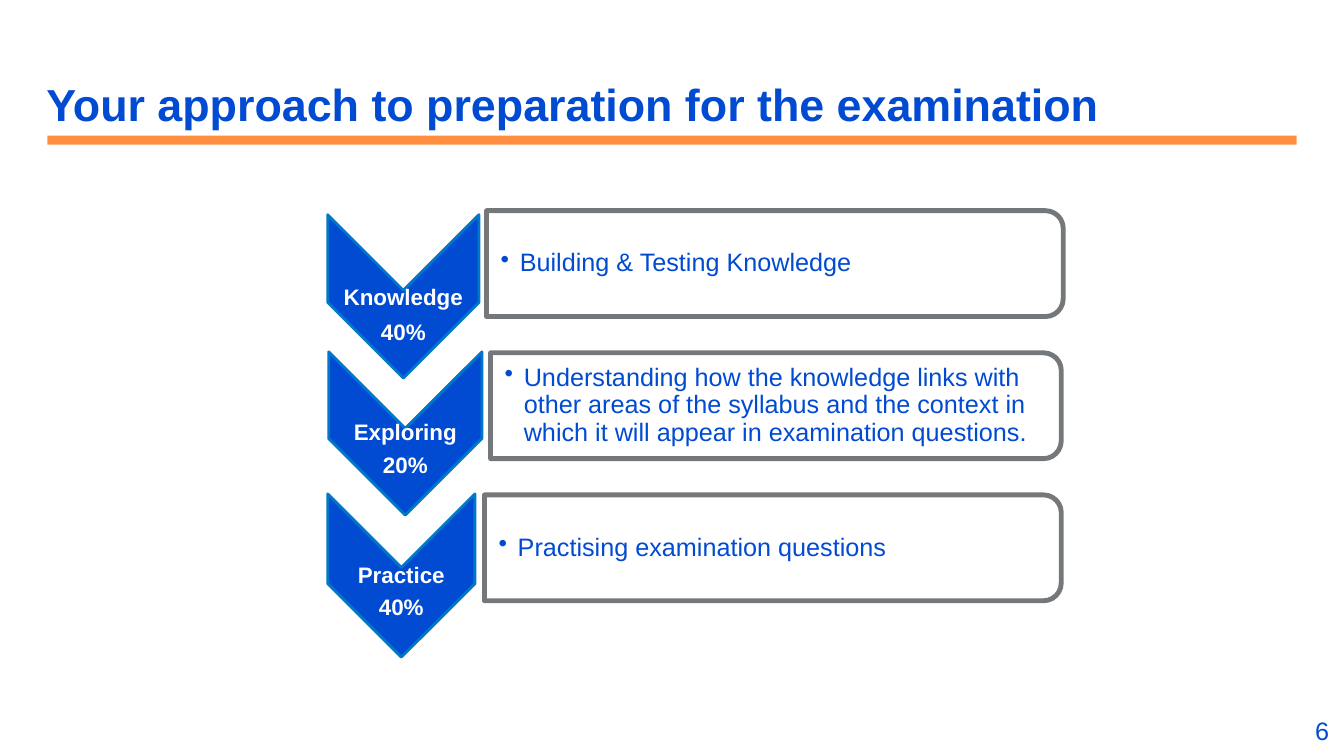
from dataclasses import dataclass

from lxml import etree
from pptx import Presentation
from pptx.dml.color import RGBColor
from pptx.enum.shapes import MSO_CONNECTOR as CONN
from pptx.enum.shapes import MSO_SHAPE as SHAPE
from pptx.enum.text import MSO_ANCHOR as ANCHOR
from pptx.enum.text import PP_ALIGN as ALIGN
from pptx.oxml.ns import qn
from pptx.util import Emu, Inches, Pt

CELL = Inches(0.1)
BLUE, EDGE, ORANGE, GREY, WHITE = "004BD2", "0077C8", "FF6900", "75787B", "FFFFFF"
PITCH = 14.1
FIRST_BOX_ROW = 26.15
CHEVRON_LENGTH, BOX_HEIGHT = 16.2, 10.5


@dataclass
class Step:
    name: str
    share: str
    detail: str
    chevron_col: float
    chevron_row: float
    chevron_width: float
    label_row: float
    box_col: float
    box_width: float
    label_spacing: float = 0.9


STEPS = [
    Step("Knowledge", "40%", "Building & Testing Knowledge",
         40, 29.4, 15, 31.15, 76.85, 57.2, 1.0),
    Step("Exploring", "20%",
         "Understanding how the knowledge links with other areas of the syllabus "
         "and the context in which it will appear in examination questions.",
         40.2, 43, 15.2, 44.65, 76.95, 56.6),
    Step("Practice", "40%", "Practising examination questions",
         39.8, 57.1, 14.6, 58.75, 76.65, 57.2),
]


def grid(cells: float) -> Emu:
    return Emu(round(cells * CELL))


def rgb(color: str) -> RGBColor:
    return RGBColor.from_string(color)


def set_alpha(parent, percent: int) -> None:
    clr = next(parent.iter(qn("a:srgbClr")))
    etree.SubElement(clr, qn("a:alpha"), val=str(percent * 1000))


def add_turned(slide, kind, col: float, row: float, length: float, breadth: float,
               fill: str, line: str, weight: float):
    s = slide.shapes.add_shape(kind, grid(col - length / 2), grid(row - breadth / 2),
                               grid(length), grid(breadth))
    s.rotation = 90
    s.shadow.inherit = False
    s.fill.solid()
    s.fill.fore_color.rgb = rgb(fill)
    s.line.color.rgb = rgb(line)
    s.line.width = Pt(weight)
    return s


def add_text(slide, lines: list[str], col: float, row: float, width: float, height: float,
             size: int, color: str, bold: bool = False, align=ALIGN.LEFT,
             anchor=ANCHOR.MIDDLE, spacing: float = 0.9, left: float = 0.1, right: float = 0.1):
    tb = slide.shapes.add_textbox(grid(col), grid(row), grid(width), grid(height))
    tf = tb.text_frame
    tf.word_wrap = True
    tf.vertical_anchor = anchor
    tf.margin_left, tf.margin_right = grid(left), grid(right)
    tf.margin_top = tf.margin_bottom = 0
    tf.text = "\n".join(lines)
    for p in tf.paragraphs:
        p.alignment = align
        p.line_spacing = spacing
        for r in p.runs:
            r.font.name = "Arial"
            r.font.size = Pt(size)
            r.font.bold = bold
            r.font.color.rgb = rgb(color)
    return tf


def add_rule(slide) -> None:
    s = slide.shapes.add_connector(CONN.STRAIGHT, grid(4.7), grid(13.9), grid(128.6), grid(13.9))
    s.line.color.rgb = rgb(ORANGE)
    s.line.width = Pt(6.5)
    props = s._element.spPr
    set_alpha(props, 75)
    etree.SubElement(props, qn("a:effectLst"))


def add_step(slide, step: Step, box_row: float) -> None:
    add_turned(slide, SHAPE.CHEVRON, step.chevron_col, step.chevron_row,
               CHEVRON_LENGTH, step.chevron_width, BLUE, EDGE, 2)
    label = add_text(slide, [step.name, step.share],
                     step.chevron_col - step.chevron_width / 2, step.label_row - 3.5,
                     step.chevron_width, 7, 16, WHITE, True, ALIGN.CENTER,
                     spacing=step.label_spacing)
    label.paragraphs[0].space_after = Pt(6)

    box = add_turned(slide, SHAPE.ROUND_2_SAME_RECTANGLE, step.box_col, box_row,
                     BOX_HEIGHT, step.box_width, WHITE, GREY, 3.5)
    set_alpha(box._element.spPr, 90)
    detail = add_text(slide, [step.detail], step.box_col - step.box_width / 2, box_row - 4.75,
                      step.box_width - 0.5, 9.5, 18, BLUE, left=1.4)
    props = detail.paragraphs[0]._p.get_or_add_pPr()
    props.set("marL", str(grid(1.9)))
    props.set("indent", str(-grid(1.9)))
    etree.SubElement(props, qn("a:buChar"), char="•")


def main() -> None:
    prs = Presentation()
    prs.slide_width, prs.slide_height = Inches(13.33), Inches(7.5)
    slide = prs.slides.add_slide(prs.slide_layouts[6])
    add_rule(slide)
    add_text(slide, ["6"], 126.2, 70.5, 6.6, 4, 18, BLUE,
             align=ALIGN.RIGHT, spacing=1.0, right=1)
    add_text(slide, ["Your approach to preparation for the examination"],
             4.6, -1, 107.4, 14, 32, BLUE, True, anchor=ANCHOR.BOTTOM, left=0, right=0)
    for i, step in enumerate(STEPS):
        add_step(slide, step, FIRST_BOX_ROW + i * PITCH)
    prs.save("out.pptx")


if __name__ == "__main__":
    main()
